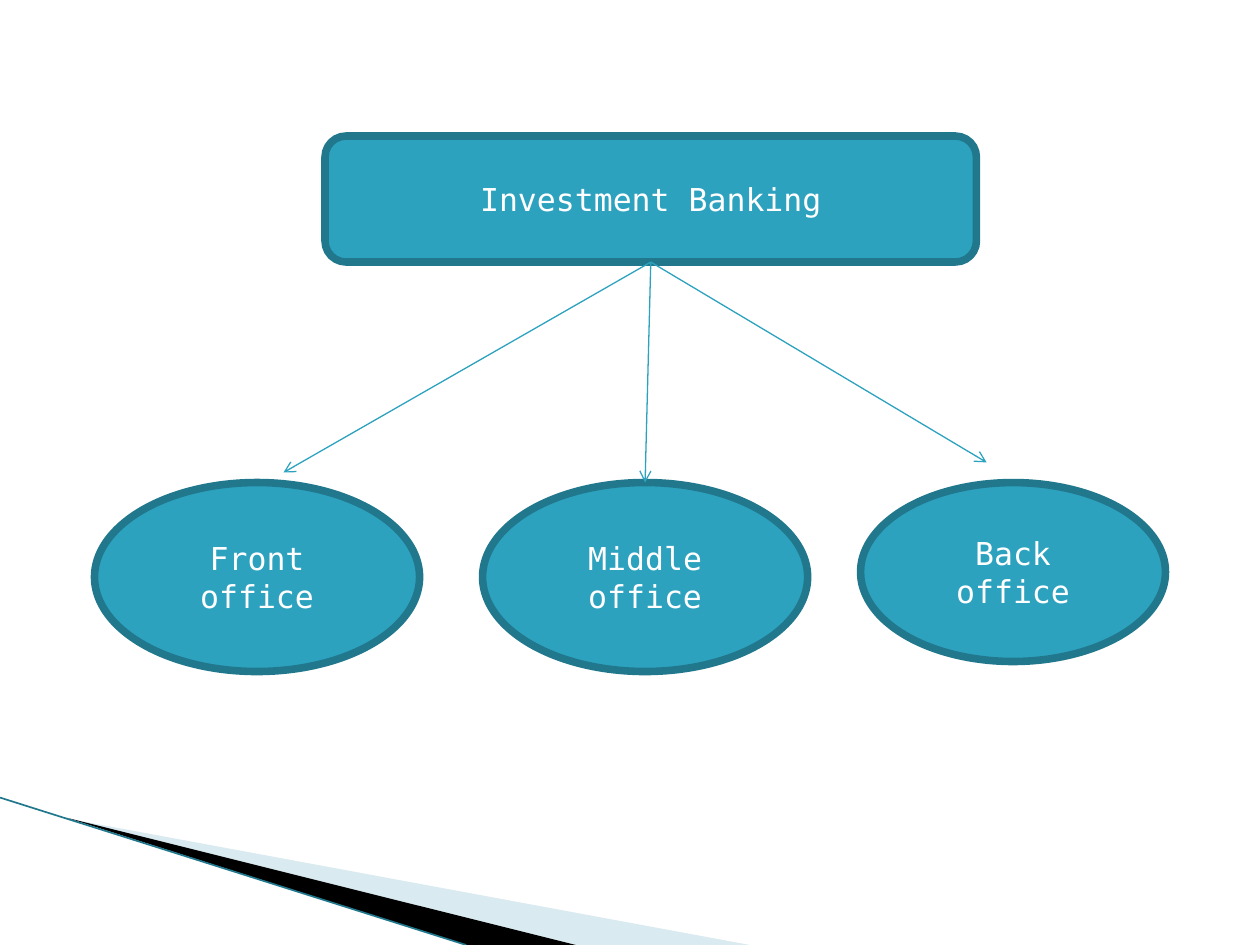
import pptx
import pptx.dml.color
import pptx.enum.shapes
import pptx.enum.text
import pptx.util
from lxml import etree
from pptx.oxml.ns import qn
from pptx.util import Inches, Pt

SHAPE = pptx.enum.shapes.MSO_SHAPE
TOP, BOTTOM = 0, 2


def color(hex_code):
    return pptx.dml.color.RGBColor.from_string(hex_code)


class OrgSlide:
    font = "DejaVu Sans Mono"
    teal = "2DA2BF"
    dark_teal = "21788D"

    def __init__(self, slide):
        self.slide = slide

    def wedge(self, points, fill, opacity=None):
        """Draw a borderless polygon through points given in inches."""
        start, *others = [(Inches(x), Inches(y)) for x, y in points]
        builder = self.slide.shapes.build_freeform(*start)
        builder.add_line_segments(others, close=True)
        shape = builder.convert_to_shape()
        shape.shadow.inherit = False
        shape.fill.solid()
        shape.fill.fore_color.rgb = color(fill)
        shape.line.fill.background()
        if opacity is not None:
            fill_color = shape.fill._xPr.find(qn("a:solidFill"))[0]
            etree.SubElement(fill_color, qn("a:alpha"), val=str(opacity * 1000))

    def node(self, kind, label, left, top, width, height):
        shape = self.slide.shapes.add_shape(
            kind, Inches(left), Inches(top), Inches(width), Inches(height))
        shape.shadow.inherit = False
        shape.fill.solid()
        shape.fill.fore_color.rgb = color(self.teal)
        shape.line.color.rgb = color(self.dark_teal)
        shape.line.width = Pt(4.33)
        frame = shape.text_frame
        frame.word_wrap = True
        frame.vertical_anchor = pptx.enum.text.MSO_ANCHOR.MIDDLE
        paragraph = frame.paragraphs[0]
        paragraph.text = label
        paragraph.alignment = pptx.enum.text.PP_ALIGN.CENTER
        paragraph.font.name = self.font
        paragraph.font.size = Pt(18)
        paragraph.font.color.rgb = color("FFFFFF")
        return shape

    def line(self, start, end, stroke, width):
        connector = self.slide.shapes.add_connector(
            pptx.enum.shapes.MSO_CONNECTOR.STRAIGHT,
            *(Inches(value) for value in (*start, *end)))
        connector.line.color.rgb = color(stroke)
        connector.line.width = Pt(width)
        etree.SubElement(connector._element.spPr, qn("a:effectLst"))
        return connector

    def arrow(self, parent, start, end):
        """Draw an arrow that leaves the bottom of the parent node."""
        connector = self.line(start, end, self.teal, 0.75)
        etree.SubElement(connector.line._get_or_add_ln(), qn("a:tailEnd"), type="arrow")
        connector.begin_connect(parent, BOTTOM)
        return connector


def main():
    deck = pptx.Presentation()
    deck.slide_width, deck.slide_height = Inches(10), Inches(7.5)
    org = OrgSlide(deck.slides.add_slide(deck.slide_layouts[6]))

    org.wedge([(0.55, 6.5), (5.95, 7.5), (4.56, 7.5)], "A0CBDC", opacity=40)
    org.wedge([(0.53, 6.49), (4.57, 7.5), (3.7, 7.5)], "000000")
    org.line((0, 6.33), (3.7, 7.5), org.dark_teal, 0.95)

    bank = org.node(SHAPE.ROUNDED_RECTANGLE, "Investment Banking", 2.58, 1.08, 5.17, 1)
    offices = [
        ("Front office", 0.75, 2.58, 1.5),
        ("Middle office", 3.83, 2.58, 1.5),
        ("Back office", 6.83, 2.42, 1.42),
    ]
    front, middle, back = [
        org.node(SHAPE.OVAL, label, left, 3.83, width, height)
        for label, left, width, height in offices]

    bank_bottom = (5.17, 2.08)
    org.arrow(bank, bank_bottom, (2.25, 3.75))
    org.arrow(bank, bank_bottom, (5.12, 3.83)).end_connect(middle, TOP)
    org.arrow(bank, bank_bottom, (7.83, 3.67))

    deck.save("out.pptx")


if __name__ == "__main__":
    main()
